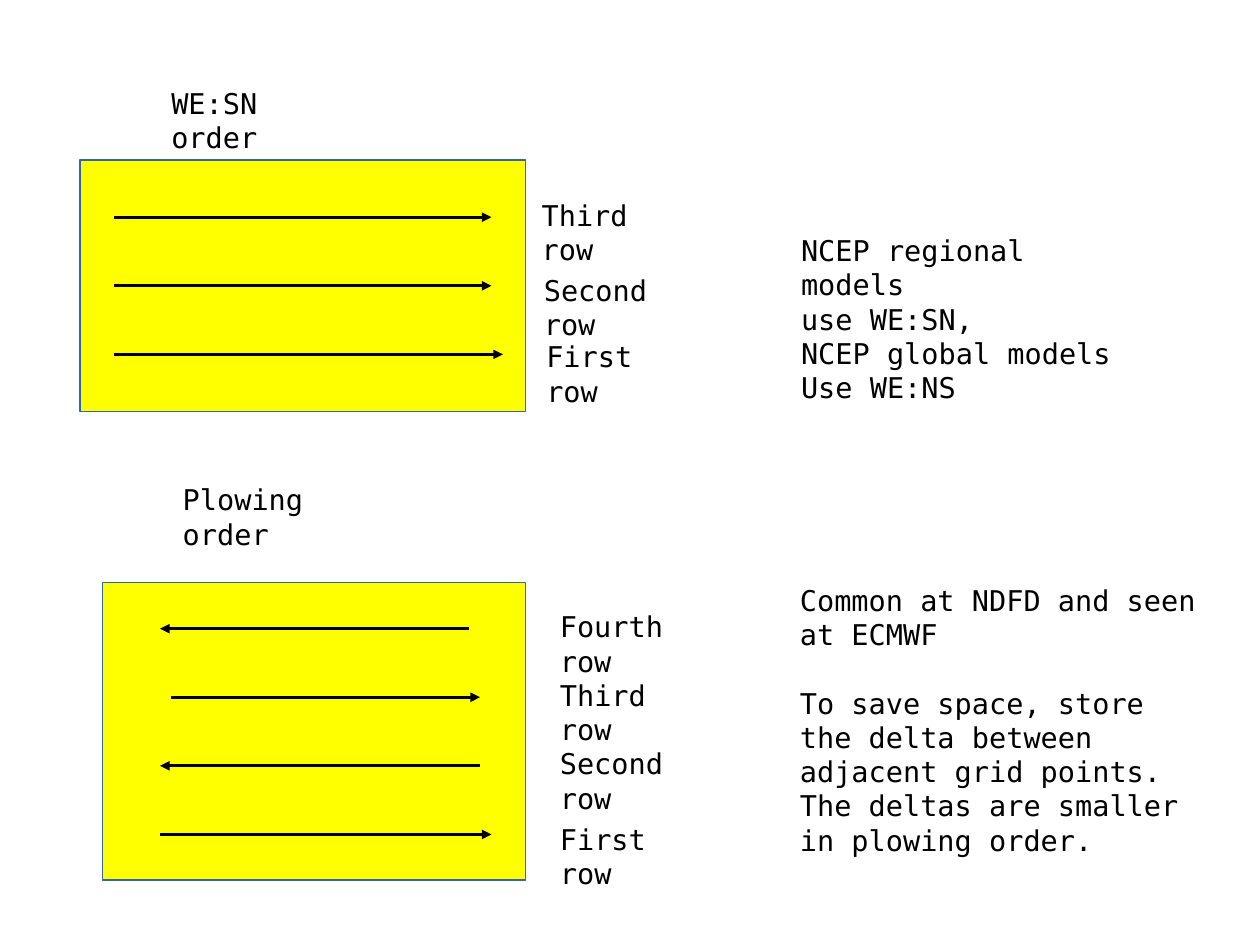
import pptx
import pptx.util
import pptx.dml.color
import pptx.enum.shapes
import pptx.oxml
import pptx.oxml.ns

Pt = pptx.util.Pt
BLACK = pptx.dml.color.RGBColor(0x00, 0x00, 0x00)
YELLOW = pptx.dml.color.RGBColor(0xFF, 0xFF, 0x00)
BLUE = pptx.dml.color.RGBColor(0x34, 0x65, 0xA4)
FONT = "DejaVu Sans Mono"
SIZE = 18
HAIR = 0
STEP = 43.2
GAP = 21.5

deck = pptx.Presentation()
deck.slide_width, deck.slide_height = Pt(793.7), Pt(595.28)
slide = deck.slides.add_slide(deck.slide_layouts[6])


def add_text(left, top, width, height, *groups):
    """Add a text box; groups of lines are set apart by one line's space."""
    box = slide.shapes.add_textbox(Pt(left), Pt(top), Pt(width), Pt(height))
    frame = box.text_frame
    frame.word_wrap = True
    para = frame.paragraphs[0]
    for g, lines in enumerate(groups):
        for n, line in enumerate(lines):
            if g or n:
                para = frame.add_paragraph()
            if g and n == 0:
                para.space_before = Pt(GAP)
            run = para.add_run()
            run.text = line
            run.font.name = FONT
            run.font.size = Pt(SIZE)
            run.font.color.rgb = BLACK


def add_arrow(start, end, y):
    arrow = slide.shapes.add_connector(
        pptx.enum.shapes.MSO_CONNECTOR.STRAIGHT, Pt(start), Pt(y), Pt(end), Pt(y))
    arrow.line.color.rgb = BLACK
    arrow.line.width = Pt(HAIR)
    head = pptx.oxml.parse_xml(
        f'<a:tailEnd {pptx.oxml.ns.nsdecls("a")} type="triangle"/>')
    arrow.line._get_or_add_ln().append(head)
    arrow._element.spPr.append(
        pptx.oxml.parse_xml(f'<a:effectLst {pptx.oxml.ns.nsdecls("a")}/>'))


# Grid box, y of the first row, then rows from the bottom up:
# arrow start and end, label, label left, top and width
grids = [
    ((64.8, 367.2, 266.4, 187.2), 525.6, [
        (100.8, 309.6, "First row", 345.6, 514.1, 111.6),
        (302.4, 100.8, "Second row", 345.6, 466.6, 122.4),
        (108, 302.4, "Third row", 345.6, 423.4, 111.6),
        (295.2, 100.8, "Fourth row", 345.6, 380.2, 122.4),
    ]),
    ((50.4, 100.8, 280.8, 158.4), 223.2, [
        (72, 316.8, "First row", 337, 210.2, 111.6),
        (72, 309.6, "Second row", 335.5, 168.5, 122.4),
        (72, 309.6, "Third row", 334.1, 121, 111.6),
    ]),
]
for area, base, rows in grids:
    grid = slide.shapes.add_shape(
        pptx.enum.shapes.MSO_SHAPE.RECTANGLE, *[Pt(v) for v in area])
    grid.shadow.inherit = False
    grid.fill.solid()
    grid.fill.fore_color.rgb = YELLOW
    grid.line.color.rgb = BLUE
    grid.line.width = Pt(HAIR)
    for i, (start, end, label, left, top, width) in enumerate(rows):
        add_arrow(start, end, base - i * STEP)
        add_text(left, top, width, 28.1, [label])

add_text(100.8, 50.4, 133.2, 28.1, ["WE:SN order"])
add_text(108, 300.2, 154.8, 28.1, ["Plowing order"])
add_text(496.8, 363.6, 273.6, 195.1, [
    "Common at NDFD and seen", "at ECMWF"], [
    "To save space, store", "the delta between", "adjacent grid points.",
    "The deltas are smaller", "in plowing order."])
add_text(497.5, 143.3, 230.4, 90.7, [
    "NCEP regional models", "use WE:SN,", "NCEP global models", "Use WE:NS"])

deck.save("out.pptx")
